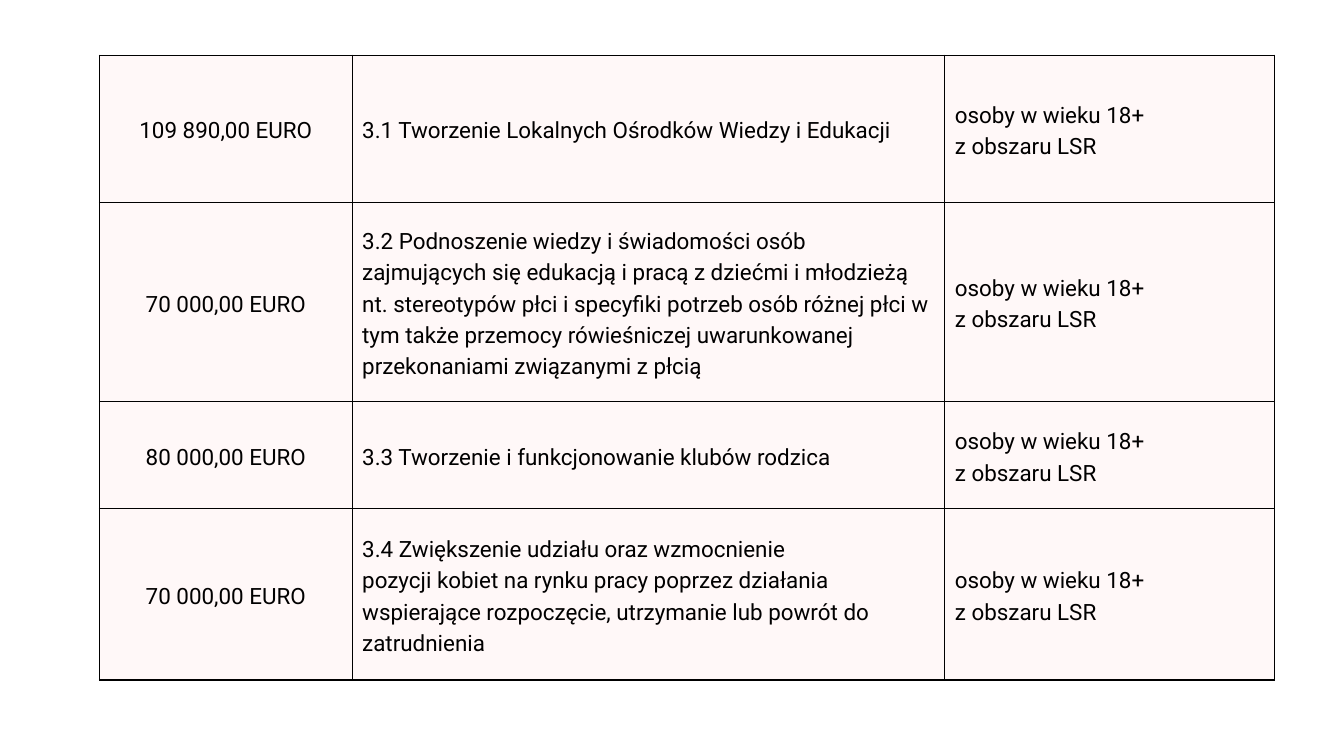
from dataclasses import dataclass

from lxml import etree
from pptx import Presentation
from pptx.dml.color import RGBColor
from pptx.enum.text import MSO_ANCHOR, PP_ALIGN
from pptx.oxml.ns import qn
from pptx.util import Inches, Pt

CENTER, LEFT = PP_ALIGN.CENTER, PP_ALIGN.LEFT
MIDDLE = MSO_ANCHOR.MIDDLE
BLANK_LAYOUT = 6


@dataclass(frozen=True)
class Theme:
    font: str = "Roboto"
    size: float = 24
    line_spacing: float = 33.6
    text: str = "000000"
    fill: str = "FFF8F8"
    border: str = "000000"
    border_width: float = 1.5
    margin: float = 0.15


THEME = Theme()
SLIDE_WIDTH, SLIDE_HEIGHT = 20, 11.25
TABLE_LEFT, TABLE_TOP = 1.48, 0.82
COLUMN_WIDTHS = (3.76, 8.82, 4.91)
COLUMN_ALIGNMENTS = (CENTER, LEFT, LEFT)

# Row height, budget, and the paragraphs describing the undertaking
UNDERTAKINGS = [
    (2.19, "109 890,00 EURO", ["3.1 Tworzenie Lokalnych Ośrodków Wiedzy i Edukacji"]),
    (2.97, "70 000,00 EURO", [
        "3.2 Podnoszenie wiedzy i świadomości osób zajmujących się edukacją "
        "i pracą z dziećmi i młodzieżą nt. stereotypów płci i specyfiki potrzeb "
        "osób różnej płci w tym także przemocy rówieśniczej uwarunkowanej "
        "przekonaniami związanymi z płcią",
    ]),
    (1.59, "80 000,00 EURO", ["3.3 Tworzenie i funkcjonowanie klubów rodzica"]),
    (2.55, "70 000,00 EURO", [
        "3.4 Zwiększenie udziału oraz wzmocnienie",
        "pozycji kobiet na rynku pracy poprzez działania wspierające "
        "rozpoczęcie, utrzymanie lub powrót do zatrudnienia",
    ]),
]
TARGET_GROUP = ["osoby w wieku 18+", "z obszaru LSR"]


def add_borders(cell):
    properties = cell._tc.get_or_add_tcPr()
    for index, side in enumerate(("lnL", "lnR", "lnT", "lnB")):
        line = etree.Element(qn(f"a:{side}"), w=str(Pt(THEME.border_width)))
        solid = etree.SubElement(line, qn("a:solidFill"))
        etree.SubElement(solid, qn("a:srgbClr"), val=THEME.border)
        properties.insert(index, line)


def write_cell(cell, lines, alignment):
    cell.vertical_anchor = MIDDLE
    cell.margin_left = cell.margin_right = Inches(THEME.margin)
    cell.margin_top = cell.margin_bottom = Inches(THEME.margin)
    cell.fill.solid()
    cell.fill.fore_color.rgb = RGBColor.from_string(THEME.fill)
    add_borders(cell)

    frame = cell.text_frame
    for index, line in enumerate(lines):
        paragraph = frame.add_paragraph() if index else frame.paragraphs[0]
        paragraph.alignment = alignment
        paragraph.line_spacing = Pt(THEME.line_spacing)
        run = paragraph.add_run()
        run.text = line
        run.font.name = THEME.font
        run.font.size = Pt(THEME.size)
        run.font.color.rgb = RGBColor.from_string(THEME.text)


def add_budget_table(slide):
    heights = [height for height, _, _ in UNDERTAKINGS]
    table = slide.shapes.add_table(
        len(UNDERTAKINGS), len(COLUMN_WIDTHS),
        Inches(TABLE_LEFT), Inches(TABLE_TOP),
        Inches(sum(COLUMN_WIDTHS)), Inches(sum(heights)),
    ).table
    table.first_row = table.horz_banding = False
    for column, width in zip(table.columns, COLUMN_WIDTHS):
        column.width = Inches(width)
    for row, (height, budget, description) in zip(table.rows, UNDERTAKINGS):
        row.height = Inches(height)
        contents = ([budget], description, TARGET_GROUP)
        for cell, lines, alignment in zip(row.cells, contents, COLUMN_ALIGNMENTS):
            write_cell(cell, lines, alignment)


def main():
    presentation = Presentation()
    presentation.slide_width = Inches(SLIDE_WIDTH)
    presentation.slide_height = Inches(SLIDE_HEIGHT)
    slide = presentation.slides.add_slide(presentation.slide_layouts[BLANK_LAYOUT])
    add_budget_table(slide)
    presentation.save("out.pptx")


if __name__ == "__main__":
    main()
